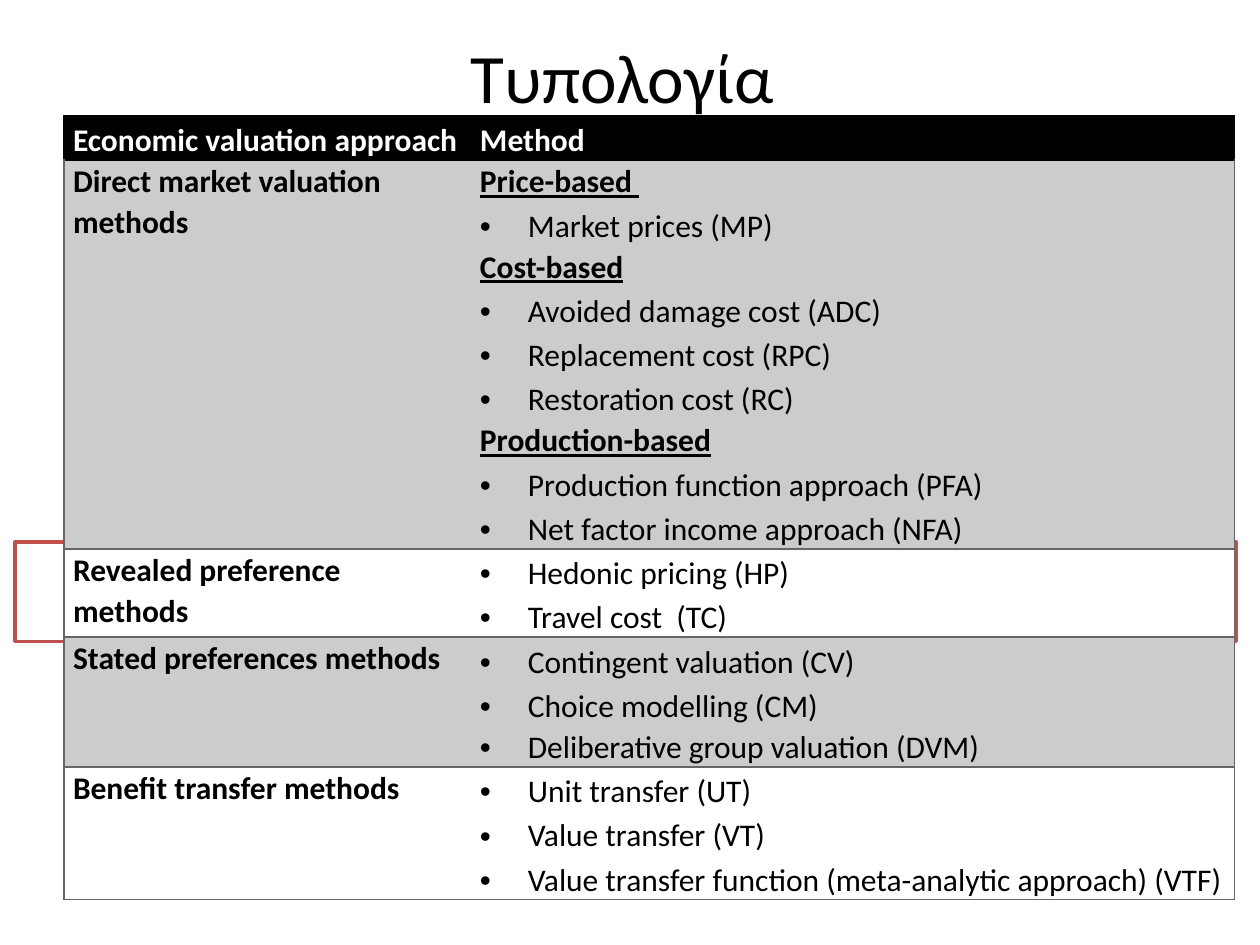
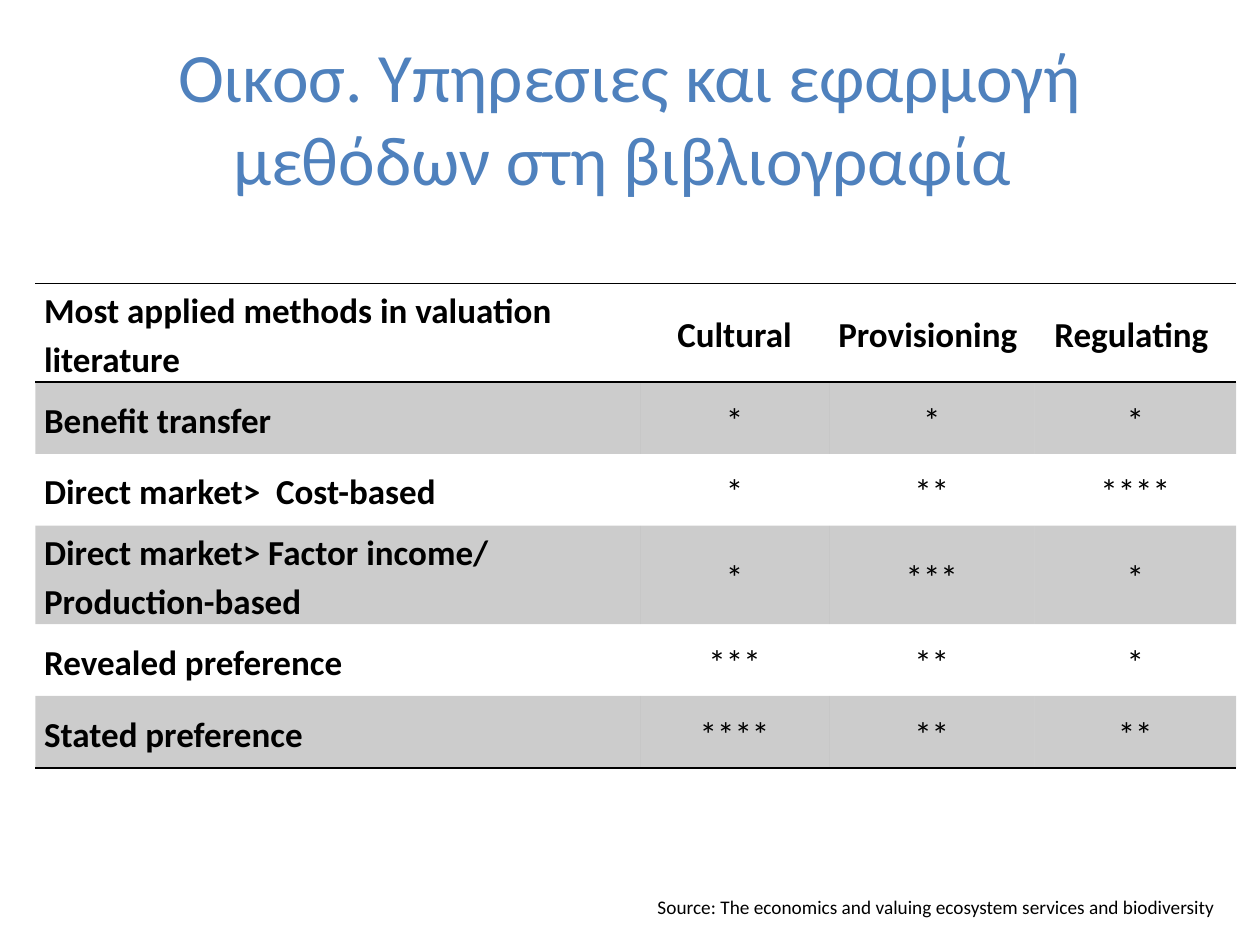
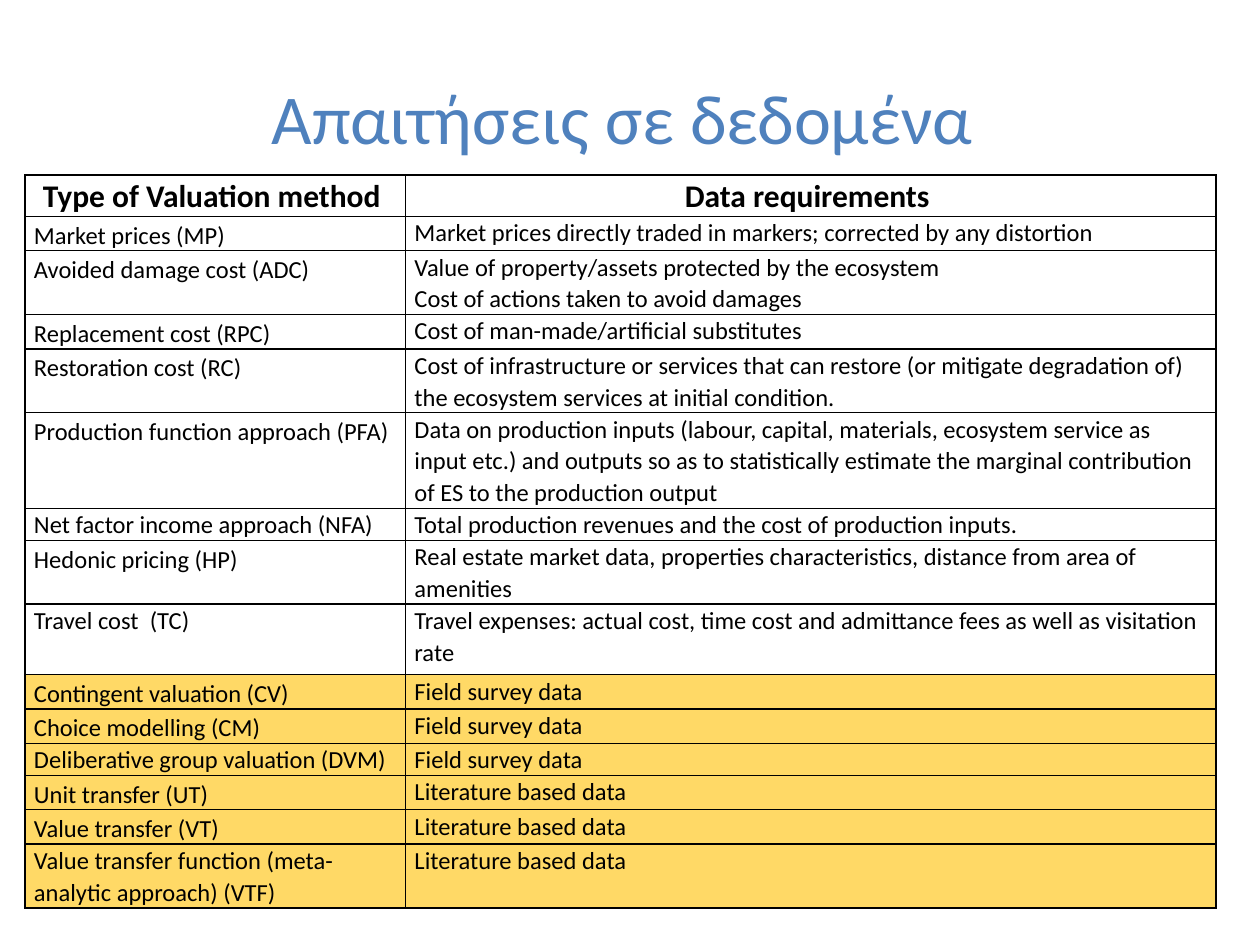
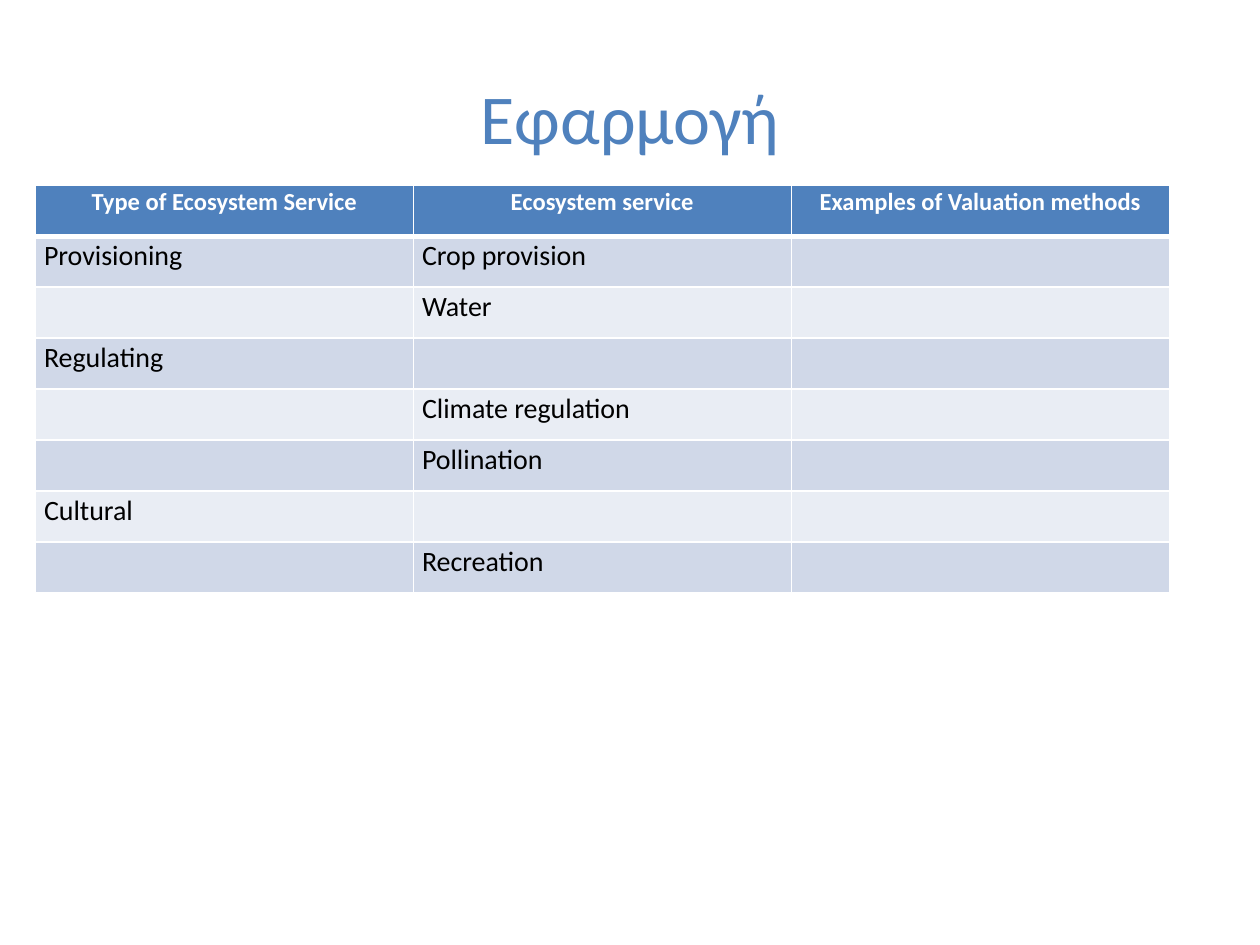
import pptx
import pptx.util
import pptx.dml.color
import pptx.enum.shapes
import pptx.enum.text
import pptx.oxml.ns
from lxml import etree

Inches = pptx.util.Inches
ALIGN = pptx.enum.text.PP_ALIGN
ANCHOR = pptx.enum.text.MSO_ANCHOR
qn = pptx.oxml.ns.qn

COLORS = {
    "black": "000000", "white": "FFFFFF", "blue": "4F81BD", "red": "C0504D",
    "gray": "CCCCCC", "rule": "666666", "amber": "FFD966",
    "band_dark": "D0D8E8", "band_light": "E9EDF4",
}
FONT = "Calibri"


def rgb(name):
    return pptx.dml.color.RGBColor.from_string(COLORS[name])


def write(p, text, size=18, color="black", bold=False, underline=False,
          align=ALIGN.LEFT, spacing=None, bullet=False):
    """Put one formatted run into a paragraph."""
    p.alignment = align
    if spacing:
        p.line_spacing = spacing
    if bullet:
        pPr = p._p.get_or_add_pPr()
        pPr.set("marL", str(Inches(0.38)))
        pPr.set("indent", str(-Inches(0.38)))
        etree.SubElement(pPr, qn("a:buFont"), typeface="Arial")
        etree.SubElement(pPr, qn("a:buChar"), char="•")
    r = p.add_run()
    r.text = text
    r.font.name = FONT
    r.font.size = pptx.util.Pt(size)
    r.font.color.rgb = rgb(color)
    r.font.bold = bold
    r.font.underline = underline


class Deck:
    def __init__(self):
        self.prs = pptx.Presentation()
        self.prs.slide_width = Inches(10)
        self.prs.slide_height = Inches(7.5)
        self.s = None

    def slide(self, title, size=40, color="blue", height=1.25):
        self.s = self.prs.slides.add_slide(self.prs.slide_layouts[5])
        sp = self.s.shapes.title
        sp.left, sp.top = Inches(0.5), Inches(0.3)
        sp.width, sp.height = Inches(9), Inches(height)
        tf = sp.text_frame
        tf.auto_size = pptx.enum.text.MSO_AUTO_SIZE.NONE
        tf.vertical_anchor = ANCHOR.MIDDLE
        write(tf.paragraphs[0], title, size=size, color=color, align=ALIGN.CENTER)

    def rect(self, x, y, w, h, fill, line, width):
        sp = self.s.shapes.add_shape(pptx.enum.shapes.MSO_SHAPE.RECTANGLE,
                                     Inches(x), Inches(y), Inches(w), Inches(h))
        sp.shadow.inherit = False
        sp.fill.solid()
        sp.fill.fore_color.rgb = rgb(fill)
        sp.line.color.rgb = rgb(line)
        sp.line.width = pptx.util.Pt(width)

    def text(self, x, y, w, h, text, **fmt):
        sp = self.s.shapes.add_textbox(Inches(x), Inches(y), Inches(w), Inches(h))
        sp.text_frame.word_wrap = True
        write(sp.text_frame.paragraphs[0], text, **fmt)

    def table(self, x, y, widths, heights, rows, look, fmt):
        """look(r, c) gives the cell's style, fmt(r, c, line) the text format."""
        gf = self.s.shapes.add_table(len(rows), len(widths), Inches(x), Inches(y),
                                     Inches(sum(widths)), Inches(sum(heights)))
        tbl = gf.table
        tbl.first_row = tbl.horz_banding = False
        for col, w in zip(tbl.columns, widths):
            col.width = Inches(w)
        for row, h in zip(tbl.rows, heights):
            row.height = Inches(h)
        for r, row in enumerate(rows):
            for c, text in enumerate(row):
                cell = tbl.cell(r, c)
                self.style_cell(cell, **look(r, c))
                if not text:
                    continue
                tf = cell.text_frame
                for i, line in enumerate(text.split("\n")):
                    p = tf.add_paragraph() if i else tf.paragraphs[0]
                    write(p, line, **fmt(r, c, line))

    def style_cell(self, cell, fill=None, alpha=None, borders=None, anchor=ANCHOR.TOP):
        cell.margin_left = cell.margin_right = Inches(0.07)
        cell.margin_top = cell.margin_bottom = 0
        cell.vertical_anchor = anchor
        tcPr = cell._tc.get_or_add_tcPr()
        for side in "LRTB":
            color, width = (borders or {}).get(side, (None, 0))
            ln = etree.SubElement(tcPr, qn("a:ln" + side), w=str(pptx.util.Pt(width)))
            if color:
                solid = etree.SubElement(ln, qn("a:solidFill"))
                etree.SubElement(solid, qn("a:srgbClr"), val=COLORS[color])
            else:
                etree.SubElement(ln, qn("a:noFill"))
        if not fill:
            cell.fill.background()
            return
        cell.fill.solid()
        cell.fill.fore_color.rgb = rgb(fill)
        if alpha:
            clr = tcPr.find(qn("a:solidFill")).find(qn("a:srgbClr"))
            etree.SubElement(clr, qn("a:alpha"), val=str(alpha * 1000))


def typology(deck):
    deck.slide("Τυπολογία ", size=39.6, color="black", height=0.61)
    deck.rect(0.12, 4.3, 9.69, 0.79, "white", "red", 2)
    rows = [
        ("Economic valuation approach", "Method"),
        ("Direct market valuation methods",
         "Price-based \nMarket prices (MP)\n"
         "Cost-based\nAvoided damage cost (ADC)\nReplacement cost (RPC)\n"
         "Restoration cost (RC)\n"
         "Production-based\nProduction function approach (PFA)\n"
         "Net factor income approach (NFA)"),
        ("Revealed preference methods", "Hedonic pricing (HP)\nTravel cost  (TC)"),
        ("Stated preferences methods",
         "Contingent valuation (CV)\nChoice modelling (CM)\n"
         "Deliberative group valuation (DVM)"),
        ("Benefit transfer methods",
         "Unit transfer (UT)\nValue transfer (VT)\n"
         "Value transfer function (meta-analytic approach) (VTF)"),
    ]

    def look(r, c):
        line = ("rule" if r else "black", 1)
        top = ("rule" if r > 1 else "black", 1)
        return dict(fill=("black", "gray", None, "gray", None)[r],
                    borders={"LR"[c]: line, "T": top, "B": line})

    def fmt(r, c, line):
        if r == 0:
            return dict(color="white", bold=True, spacing=1.15)
        if c == 0:
            return dict(bold=True, spacing=1.07)
        if line.strip().endswith("-based"):
            return dict(bold=True, underline=True, spacing=1.07)
        return dict(bullet=True, align=ALIGN.JUSTIFY,
                    spacing=1.07 if "DVM" in line else 1.15)

    deck.table(0.51, 0.92, [3.23, 6.06], [0.35, 3.08, 0.7, 1.03, 1.05],
               rows, look, fmt)


def applied_methods(deck):
    deck.slide("Οικοσ. Υπηρεσιες και εφαρμογή μεθόδων στη βιβλιογραφία ", size=39.6)
    rows = [
        ("Most applied methods in valuation literature",
         "Cultural", "Provisioning ", "Regulating "),
        ("Benefit transfer", "*", "*", "*"),
        ("Direct market>  Cost-based", "*", "**", "****"),
        ("Direct market> Factor income/ Production-based", "*", "***", "*"),
        ("Revealed preference", "***", "**", "*"),
        ("Stated preference", "****", "**", "**"),
    ]
    line = ("black", 1)
    borders = {0: {"T": line, "B": line}, 1: {"T": line}, 5: {"B": line}}

    def look(r, c):
        return dict(fill="black" if r % 2 else None, alpha=20,
                    borders=borders.get(r), anchor=ANCHOR.MIDDLE)

    def fmt(r, c, line):
        return dict(size=20, bold=r == 0 or c == 0, spacing=1.15,
                    align=ALIGN.CENTER if c else ALIGN.LEFT)

    deck.table(0.28, 2.25, [4.8, 1.5, 1.63, 1.6],
               [0.78, 0.57, 0.57, 0.78, 0.57, 0.57], rows, look, fmt)
    deck.text(5.12, 7.06, 9.37, 0.29,
              "Source: The economics and valuing ecosystem services and biodiversity",
              size=11)


def data_requirements(deck):
    deck.slide("Απαιτήσεις σε δεδομένα ")
    survey, literature = "Field survey data", "Literature based data"
    rows = [
        ("Type of Valuation method ", "Data requirements "),
        ("Market prices (MP)",
         "Market prices directly traded in markers; corrected by any distortion"),
        ("Avoided damage cost (ADC)",
         "Value of property/assets protected by the ecosystem\n"
         "Cost of actions taken to avoid damages"),
        ("Replacement cost (RPC)", "Cost of man-made/artificial substitutes"),
        ("Restoration cost (RC)",
         "Cost of infrastructure or services that can restore (or mitigate "
         "degradation of) the ecosystem services at initial condition."),
        ("Production function approach (PFA)",
         "Data on production inputs (labour, capital, materials, ecosystem service "
         "as input etc.) and outputs so as to statistically estimate the marginal "
         "contribution of ES to the production output"),
        ("Net factor income approach (NFA)",
         "Total production revenues and the cost of production inputs."),
        ("Hedonic pricing (HP)",
         "Real estate market data, properties characteristics, distance from area "
         "of amenities"),
        ("Travel cost  (TC)",
         "Travel expenses: actual cost, time cost and admittance fees as well as "
         "visitation rate"),
        ("Contingent valuation (CV)", survey),
        ("Choice modelling (CM)", survey),
        ("Deliberative group valuation (DVM)", survey),
        ("Unit transfer (UT)", literature),
        ("Value transfer (VT)", literature),
        ("Value transfer function (meta-analytic approach) (VTF)", literature),
    ]
    tight_rows = (6, 8, 11, 14)

    def look(r, c):
        return dict(fill="amber" if r > 8 else None,
                    borders=dict.fromkeys("LRTB", ("black", 1)))

    def fmt(r, c, line):
        if r == 0:
            return dict(bold=True, align=ALIGN.CENTER, spacing=1.07)
        if c or r in tight_rows:
            return dict(size=14, spacing=1.07)
        return dict(size=14, align=ALIGN.JUSTIFY, spacing=1.15)

    deck.table(0.2, 1.39, [3.02, 6.43],
               [0.32, 0.27, 0.5, 0.27, 0.5, 0.75, 0.25, 0.5, 0.56,
                0.27, 0.27, 0.25, 0.27, 0.27, 0.5], rows, look, fmt)


def application(deck):
    deck.slide("Εφαρμογή")
    rows = [
        ("Type of Ecosystem Service", "Ecosystem service",
         "Examples of Valuation methods"),
        ("Provisioning", "Crop provision", ""),
        ("", "Water", ""),
        ("Regulating", "", ""),
        ("", "Climate regulation", ""),
        ("", "Pollination", ""),
        ("Cultural", "", ""),
        ("", "Recreation", ""),
    ]

    def look(r, c):
        borders = dict.fromkeys("LRTB", ("white", 1))
        if r < 2:
            borders["T" if r else "B"] = ("white", 3)
        band = "band_dark" if r % 2 else "band_light"
        return dict(fill=band if r else "blue", borders=borders)

    def fmt(r, c, line):
        if r == 0:
            return dict(size=14, color="white", bold=True, align=ALIGN.CENTER,
                        spacing=1.07)
        return dict(size=16, spacing=1.07)

    deck.table(0.28, 1.47, [3] * 3, [3.24 / len(rows)] * len(rows), rows, look, fmt)


def main():
    deck = Deck()
    for build in (typology, applied_methods, data_requirements, application):
        build(deck)
    deck.prs.save("out.pptx")


if __name__ == "__main__":
    main()
